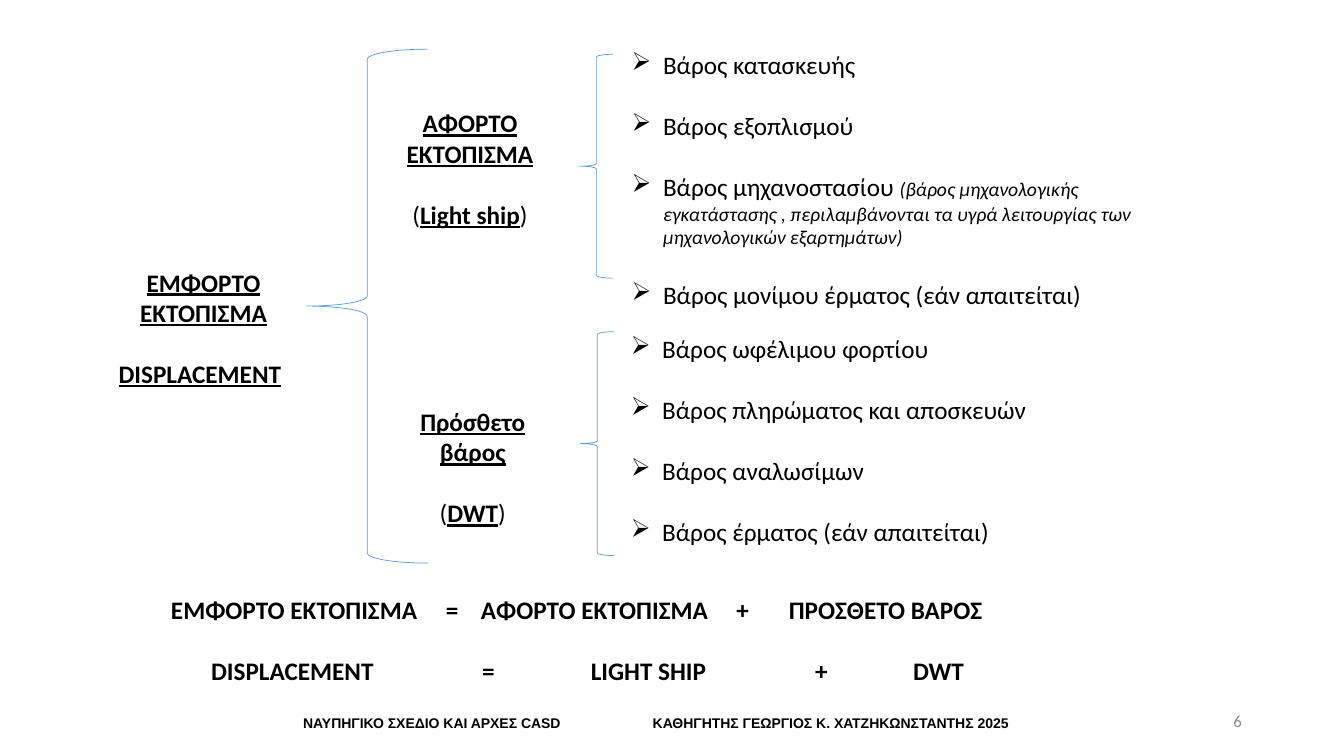
from pptx import Presentation
from pptx.util import Cm, Pt
from pptx.dml.color import RGBColor as Rgb
from pptx.enum.shapes import MSO_SHAPE as Shape
from pptx.enum.text import PP_ALIGN as Align, MSO_ANCHOR as Anchor, MSO_AUTO_SIZE as Fit
from lxml.etree import SubElement as Sub

NS = "{http://schemas.openxmlformats.org/drawingml/2006/main}"
BLACK, GREY, BLUE = "000000", "898989", "5B9BD5"
LEFT, MID, RIGHT = Align.LEFT, Align.CENTER, Align.RIGHT
GAP = 22
HANG = 0.79

STYLES = {
    "plain": {},
    "bold": {"bold": True},
    "head": {"bold": True, "underline": True},
    "note": {"italic": True, "size": Pt(14)},
}

BRACES = [
    (7.72, 1.24, 3.07, 12.95),
    (14.61, 1.37, 0.84, 5.64),
    (14.63, 8.36, 0.84, 5.64),
]

HEADS = [
    ((2.74, 6.6, 4.78, 3.3), [
        (MID, [("ΕΜΦΟΡΤΟ ΕΚΤΟΠΙΣΜΑ", "head")]),
        (LEFT, [("DISPLACEMENT", "head")]),
    ]),
    ((9.65, 2.59, 4.39, 3.3), [
        (MID, [("ΑΦΟΡΤΟ ΕΚΤΟΠΙΣΜΑ", "head")]),
        (MID, [("(", "plain"), ("Light ship", "head"), (")", "plain")]),
    ]),
    ((10.11, 10.11, 3.61, 3.3), [
        (MID, [("Πρόσθετο βάρος", "head")]),
        (MID, [("(", "plain"), ("DWT", "head"), (")", "plain")]),
    ]),
]

LISTS = [
    ((15.67, 1.12, 13.28, 6.83), [
        [("Βάρος κατασκευής", "plain")],
        [("Βάρος εξοπλισμού", "plain")],
        [("Βάρος μηχανοστασίου ", "plain"),
         ("(βάρος μηχανολογικής εγκατάστασης , περιλαμβάνονται τα υγρά "
          "λειτουργίας των μηχανολογικών εξαρτημάτων)", "note")],
        [("Βάρος μονίμου έρματος (εάν απαιτείται)", "plain")],
    ]),
    ((15.65, 8.28, 12.73, 5.59), [
        [("Βάρος ωφέλιμου φορτίου", "plain")],
        [("Βάρος πληρώματος και αποσκευών", "plain")],
        [("Βάρος αναλωσίμων", "plain")],
        [("Βάρος έρματος (εάν απαιτείται)", "plain")],
    ]),
]

SUMS = ((3.51, 14.86, 27.51, 2.54), [
    [(0.55, "ΕΜΦΟΡΤΟ ΕΚΤΟΠΙΣΜΑ"), (7.48, "="), (8.36, "ΑΦΟΡΤΟ ΕΚΤΟΠΙΣΜΑ"),
     (14.8, "+"), (16.12, "ΠΡΟΣΘΕΤΟ ΒΑΡΟΣ")],
    [(1.56, "DISPLACEMENT"), (8.39, "="), (11.13, "LIGHT SHIP"),
     (16.78, "+"), (19.25, "DWT")],
])

FOOT = ((5.89, 17.88, 21.41, 0.69), [
    [(1.5, "ΝΑΥΠΗΓΙΚΟ ΣΧΕΔΙΟ ΚΑΙ ΑΡΧΕΣ CASD"),
     (10.31, "ΚΑΘΗΓΗΤΗΣ ΓΕΩΡΓΙΟΣ Κ. ΧΑΤΖΗΚΩΝΣΤΑΝΤΗΣ 2025")],
])

PAGE = ((23.93, 17.65, 7.62, 1.02), [(RIGHT, [("6", "plain")])])


def paint(target, color):
    target.rgb = Rgb.from_string(color)


def assign(target, values):
    for name, value in values.items():
        setattr(target, name, value)


def write(slide, box, rows, size=18, face="Calibri", color=BLACK):
    frame = slide.shapes.add_textbox(*map(Cm, box)).text_frame
    assign(frame, {"word_wrap": True, "auto_size": Fit.SHAPE_TO_FIT_TEXT})
    for i, (align, runs) in enumerate(rows):
        para = frame.add_paragraph() if i else frame.paragraphs[0]
        assign(para, {"alignment": align, "space_before": Pt(GAP if i else 0)})
        for text, style in runs:
            run = para.add_run()
            run.text = text
            assign(run.font, {"name": face, "size": Pt(size), **STYLES[style]})
            paint(run.font.color, color)
    return frame


def bullet(frame):
    for para in frame.paragraphs:
        props = para._p.get_or_add_pPr()
        props.set("marL", str(Cm(HANG)))
        props.set("indent", str(-Cm(HANG)))
        Sub(props, NS + "buChar", char="➢")


def columns(slide, box, rows, **look):
    lines = [(LEFT, [("".join("\t" + word for _, word in row), "bold")]) for row in rows]
    frame = write(slide, box, lines, **look)
    for para, row in zip(frame.paragraphs, rows):
        stops = Sub(para._p.get_or_add_pPr(), NS + "tabLst")
        for stop, _ in row:
            Sub(stops, NS + "tab", pos=str(Cm(stop)), algn="l")


def brace(slide, box):
    shape = slide.shapes.add_shape(Shape.LEFT_BRACE, *map(Cm, box))
    shape.shadow.inherit = False
    shape.fill.background()
    shape.line.width = Pt(0.5)
    paint(shape.line.color, BLUE)


def main():
    deck = Presentation()
    assign(deck, {"slide_width": Cm(33.87), "slide_height": Cm(19.05)})
    slide = deck.slides.add_slide(deck.slide_layouts[6])
    for box in BRACES:
        brace(slide, box)
    for box, rows in HEADS:
        write(slide, box, rows)
    for box, items in LISTS:
        bullet(write(slide, box, [(LEFT, runs) for runs in items]))
    columns(slide, *SUMS)
    columns(slide, *FOOT, size=10, face="Arial")
    page = write(slide, *PAGE, size=12, color=GREY)
    assign(page, {"vertical_anchor": Anchor.MIDDLE, "auto_size": Fit.NONE})
    deck.save("out.pptx")


if __name__ == "__main__":
    main()
